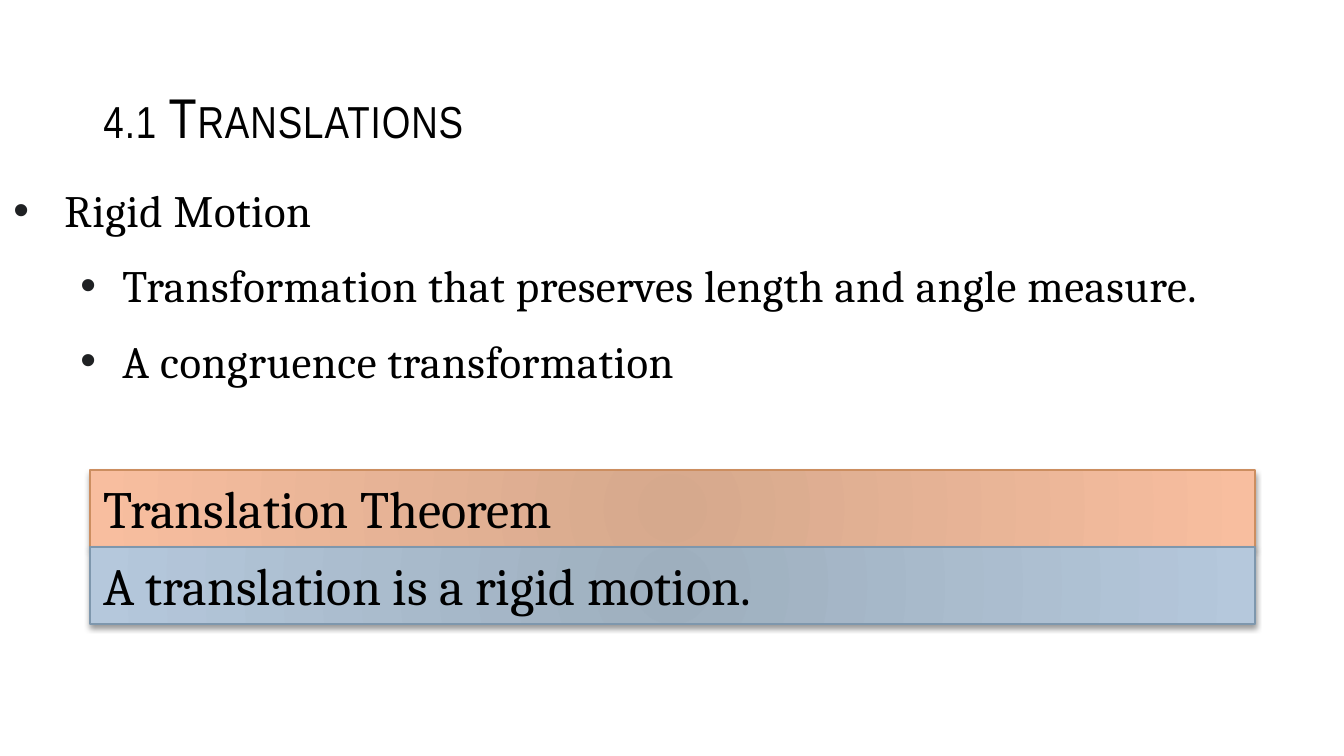
from lxml.etree import SubElement
from pptx import Presentation
from pptx.dml.color import RGBColor
from pptx.enum.shapes import MSO_SHAPE
from pptx.enum.text import MSO_ANCHOR, MSO_AUTO_SIZE, PP_ALIGN
from pptx.oxml.ns import qn
from pptx.util import Inches, Pt

TITLE = "4.1 Translations"
ITEMS = [
    (0, "Rigid Motion"),
    (1, "Transformation that preserves length and angle measure."),
    (1, "A congruence transformation"),
]
BOXES = [("Translation Theorem", "warm"), ("A translation is a rigid motion.", "cool")]

THEME = {
    "ink": "000000",
    "dot": "1F2123",
    "warm": ("D6A98D", "F8BE9F", "CC8E60"),
    "cool": ("9EAFBE", "B5C8DC", "7E97AD"),
    "title": {"name": "Arial Narrow", "size": Pt(30)},
    "body": {"name": "Cambria", "size": Pt(24)},
    "box": {"name": "Cambria", "size": Pt(28)},
}
INDENTS = [(51, -51), (109, -42)]
LEFT, WIDTH = 90, 1165
BOX_TOP, BOX_TALL = 470, 77


def px(num):
    return round(num * Inches(10) / 1344)


def apply(item, vals):
    for key, val in vals.items():
        setattr(item, key, val)


def place(shape, left, top, width, height):
    apply(shape, {"left": px(left), "top": px(top), "width": px(width), "height": px(height)})


def node(base, tag, **attrs):
    return SubElement(base, qn(tag), attrs)


def write(para, text, style, **attrs):
    run = para.add_run()
    run.text = text
    apply(run.font, THEME[style])
    run.font.color.rgb = RGBColor.from_string(THEME["ink"])
    for key, val in attrs.items():
        run.font._element.set(key, val)


def bullet(para, level):
    left, hang = INDENTS[level]
    props = para._p.get_or_add_pPr()
    props.set("marL", str(px(left)))
    props.set("indent", str(px(hang)))
    node(node(props, "a:buClr"), "a:srgbClr", val=THEME["dot"])
    node(props, "a:buFont", typeface="Arial")
    node(props, "a:buChar", char="•")


def paint(shape, tone):
    inner, outer, edge = THEME[tone]
    shape.fill.gradient()
    for stop, color in zip(shape.fill.gradient_stops, (inner, outer)):
        stop.color.rgb = RGBColor.from_string(color)
    props = shape._element.spPr
    grad = props.find(qn("a:gradFill"))
    grad.remove(grad.find(qn("a:lin")))
    ring = node(grad, "a:path", path="circle")
    node(ring, "a:fillToRect", **dict.fromkeys("ltrb", "100000"))
    shape.line.color.rgb = RGBColor.from_string(edge)
    shape.line.width = Pt(0.75)
    shape.shadow.inherit = False
    shade = node(props.find(qn("a:effectLst")), "a:outerShdw", blurRad=str(Pt(3)),
                 dist=str(Pt(2)), dir="5400000", rotWithShape="0")
    node(node(shade, "a:srgbClr", val="000000"), "a:alpha", val="40000")


def main():
    deck = Presentation()
    apply(deck, {"slide_width": px(1344), "slide_height": px(756)})
    slide = deck.slides.add_slide(deck.slide_layouts[1])
    title, body = slide.placeholders

    place(title, LEFT, 31, WIDTH, 126)
    apply(title.text_frame, {"vertical_anchor": MSO_ANCHOR.BOTTOM, "auto_size": MSO_AUTO_SIZE.NONE})
    head = title.text_frame.paragraphs[0]
    head.alignment = PP_ALIGN.LEFT
    write(head, TITLE, "title", spc="50", cap="small")

    place(body, 0, 176, 1344, 521)
    frame = body.text_frame
    frame.auto_size = MSO_AUTO_SIZE.NONE
    for num, (level, text) in enumerate(ITEMS):
        para = frame.add_paragraph() if num else frame.paragraphs[0]
        bullet(para, level)
        apply(para, {"level": level, "space_before": Pt(5.6 if num else 0), "space_after": Pt(6)})
        write(para, text, "body", spc="30")

    for num, (text, tone) in enumerate(BOXES):
        spot = [px(n) for n in (LEFT, BOX_TOP + num * BOX_TALL, WIDTH, BOX_TALL)]
        box = slide.shapes.add_shape(MSO_SHAPE.RECTANGLE, *spot)
        paint(box, tone)
        apply(box.text_frame, {"word_wrap": True, "vertical_anchor": MSO_ANCHOR.TOP,
                               "auto_size": MSO_AUTO_SIZE.SHAPE_TO_FIT_TEXT})
        para = box.text_frame.paragraphs[0]
        para.alignment = PP_ALIGN.LEFT
        write(para, text, "box")

    deck.save("out.pptx")


if __name__ == "__main__":
    main()
